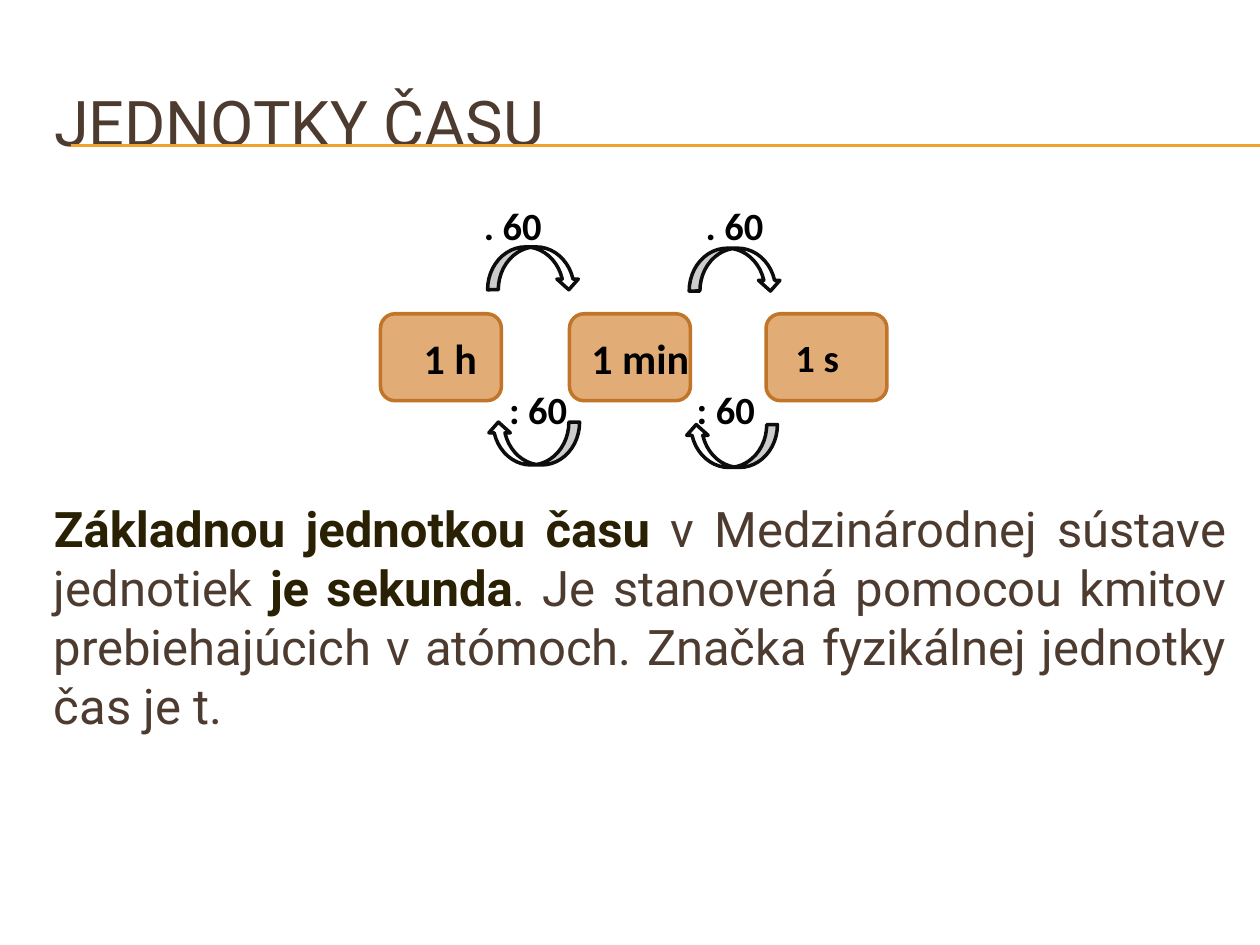
from pptx import Presentation
from pptx.dml.color import RGBColor
from pptx.enum.shapes import MSO_CONNECTOR, MSO_SHAPE
from pptx.enum.text import MSO_ANCHOR, PP_ALIGN
from pptx.oxml.ns import qn
from pptx.util import Inches, Pt
from lxml.etree import SubElement

BROWN = RGBColor(0x4E, 0x3B, 0x30)
DARK = RGBColor(0x2A, 0x20, 0x03)
GOLD = RGBColor(0xF0, 0xA2, 0x2E)
TAN = RGBColor(0xE2, 0xAC, 0x76)
RUST = RGBColor(0xC1, 0x75, 0x29)
INK = RGBColor(0x0D, 0x0D, 0x0D)
BLACK = RGBColor(0, 0, 0)
WHITE = RGBColor(0xFF, 0xFF, 0xFF)

TITLE = "JEDNOTKY ČASU"
BODY = [
    ("Základnou jednotkou času ", True),
    ("v Medzinárodnej sústave jednotiek ", False),
    ("je sekunda", True),
    (". Je stanovená pomocou kmitov prebiehajúcich v atómoch. "
     "Značka fyzikálnej jednotky čas je t.", False),
]
UNITS = [("1 h", 3.02, 0.31, 24), ("1 min", 4.52, 0.14, 24), ("1 s", 6.08, 0.2, 22)]
FACTORS = [(". 60", 3.84, 1.79), (". 60", 5.6, 1.79),
           (": 60", 4.04, 3.25), (": 60", 5.53, 3.25)]
ARROWS = [(3.87, 1.96, 0), (5.47, 1.97, 0), (3.87, 3.35, 180), (5.44, 3.37, 180)]
RULES = [1.15, 1.16]
LEFT, WIDTH = 0.33, 9.5
BOX_TOP, BOX_W, BOX_H = 2.49, 0.96, 0.69
ARROW_W, ARROW_H = 0.73, 0.34
FACTOR_W, FACTOR_H = 0.6, 0.4


def box(x, y, w, h):
    return [Inches(v) for v in (x, y, w, h)]


def style_font(font, name, size, color, bold=False):
    font.name, font.size, font.bold = name, Pt(size), bold
    font.color.rgb = color


def add_shape(slide, kind, place, fill, line):
    s = slide.shapes.add_shape(kind, *place)
    s.shadow.inherit = False
    s.fill.solid()
    s.fill.fore_color.rgb = fill
    s.line.color.rgb = line
    s.line.width = Pt(2)
    return s


def write_label(s, text, size, inset=0):
    tf = s.text_frame
    tf.margin_left = Inches(inset)
    tf.margin_right = tf.margin_top = tf.margin_bottom = 0
    tf.word_wrap = False
    tf.vertical_anchor = MSO_ANCHOR.MIDDLE
    p = tf.paragraphs[0]
    p.text = text
    p.alignment = PP_ALIGN.LEFT
    style_font(p.font, "Calibri", size, BLACK, True)


def main():
    prs = Presentation()
    prs.slide_width, prs.slide_height = Inches(10), Inches(7.5)
    slide = prs.slides.add_slide(prs.slide_layouts[5])

    for y in RULES:
        c = slide.shapes.add_connector(
            MSO_CONNECTOR.STRAIGHT, Inches(0.56), Inches(y), prs.slide_width, Inches(y))
        c.line.color.rgb = GOLD
        c.line.width = Pt(0.75)
        SubElement(c._element.spPr, qn("a:effectLst"))

    title = slide.shapes.title
    title.left, title.top, title.width, title.height = box(LEFT, 0.5, WIDTH, 0.92)
    title.text_frame.vertical_anchor = MSO_ANCHOR.MIDDLE
    p = title.text_frame.paragraphs[0]
    p.text = TITLE
    p.alignment = PP_ALIGN.LEFT
    style_font(p.font, "Roboto", 36, BROWN)

    tf = slide.shapes.add_textbox(*box(LEFT, 3.91, WIDTH, 2.74)).text_frame
    tf.word_wrap = True
    p = tf.paragraphs[0]
    p.alignment = PP_ALIGN.JUSTIFY
    for text, bold in BODY:
        r = p.add_run()
        r.text = text
        style_font(r.font, "Roboto", 28, DARK if bold else BROWN, bold)

    for text, x, inset, size in UNITS:
        s = add_shape(slide, MSO_SHAPE.ROUNDED_RECTANGLE,
                      box(x, BOX_TOP, BOX_W, BOX_H), TAN, RUST)
        write_label(s, text, size, inset)

    for x, y, angle in ARROWS:
        s = add_shape(slide, MSO_SHAPE.CURVED_DOWN_ARROW,
                      box(x, y, ARROW_W, ARROW_H), WHITE, INK)
        s.rotation = angle

    for text, x, middle in FACTORS:
        s = slide.shapes.add_textbox(*box(x, middle - FACTOR_H / 2, FACTOR_W, FACTOR_H))
        write_label(s, text, 22)

    prs.save("out.pptx")


if __name__ == "__main__":
    main()
